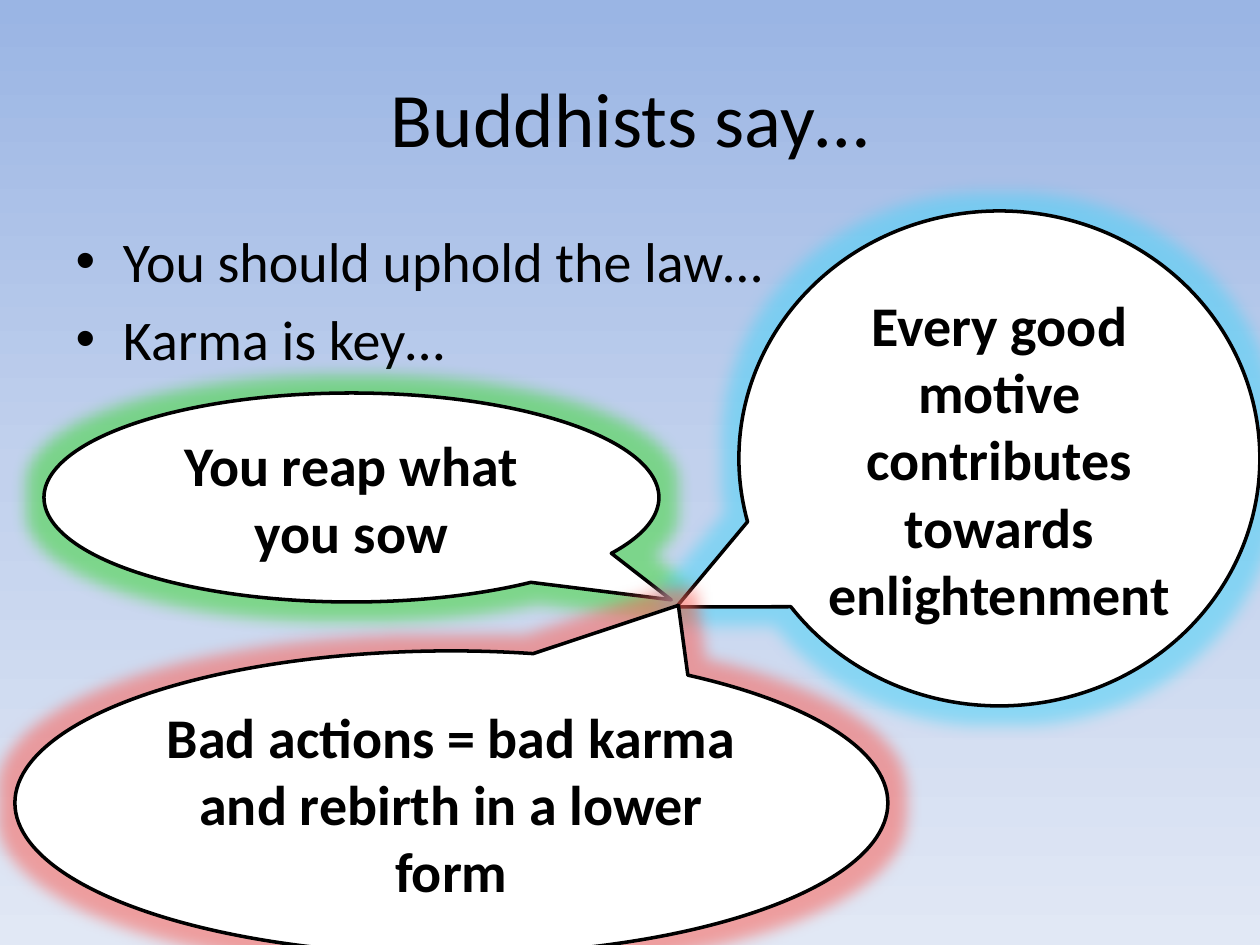
"""Build a slide on what Buddhists say, with three glowing speech bubbles."""
from lxml.etree import SubElement
from pptx import Presentation
from pptx.dml.color import RGBColor
from pptx.enum.shapes import MSO_SHAPE
from pptx.enum.text import MSO_ANCHOR, MSO_AUTO_SIZE, PP_ALIGN
from pptx.oxml.ns import qn
from pptx.util import Pt

PX = 914400 // 126
FONT = "Calibri"
COLORS = {
    "text": "000000", "bubble": "FFFFFF",
    "green": "40D63A", "blue": "4ED2F7", "red": "F96259",
}
BACKGROUND = [(0, "9AB5E4"), (50, "C2D1ED"), (100, "E1E8F5")]
TITLE = ("Buddhists say…", (63, 38, 1134, 157))
BODY = (["You should uphold the law…", "Karma is key…"], (63, 220, 1134, 624))
BUBBLES = [
    ("You reap what you sow", (44, 393, 615, 209), (0.52, 0.49), "green"),
    ("Every good motive contributes towards enlightenment",
     (739, 211, 521, 495), (-0.62, 0.3), "blue"),
    ("Bad actions = bad karma and rebirth in a lower form",
     (15, 651, 873, 304), (0.26, -0.65), "red"),
]


def rgb(name):
    return RGBColor.from_string(COLORS[name])


def emu(box):
    return [v * PX for v in box]


def place(s, box):
    s.left, s.top, s.width, s.height = emu(box)


def style(tf, size, bold=False, align=None):
    for p in tf.paragraphs:
        p.alignment = align
        for r in p.runs:
            r.font.name = FONT
            r.font.size = Pt(size)
            r.font.bold = bold
            r.font.color.rgb = rgb("text")


def add_color(parent, value):
    return SubElement(parent, qn("a:srgbClr"), val=value)


def paint_background(slide):
    fill = slide.background.fill
    fill.gradient()
    fill.gradient_angle = 270
    stops = slide.background._cSld.find(".//" + qn("a:gsLst"))
    stops.clear()
    for pos, color in BACKGROUND:
        add_color(SubElement(stops, qn("a:gs"), pos=str(pos * 1000)), color)


def add_bubble(slide, text, box, tail, glow):
    s = slide.shapes.add_shape(MSO_SHAPE.OVAL_CALLOUT, *emu(box))
    s.adjustments[0], s.adjustments[1] = tail
    s.fill.solid()
    s.fill.fore_color.rgb = rgb("bubble")
    s.line.color.rgb = rgb("text")
    s.line.width = Pt(2)
    s.shadow.inherit = False
    effects = s._element.spPr.find(qn("a:effectLst"))
    halo = SubElement(effects, qn("a:glow"), rad="228600")
    SubElement(add_color(halo, COLORS[glow]), qn("a:alpha"), val="55000")
    tf = s.text_frame
    tf.text = text
    tf.word_wrap = True
    tf.auto_size = MSO_AUTO_SIZE.SHAPE_TO_FIT_TEXT
    tf.vertical_anchor = MSO_ANCHOR.MIDDLE
    style(tf, 32, True, PP_ALIGN.CENTER)


def main():
    prs = Presentation()
    prs.slide_width, prs.slide_height = emu((1260, 945))
    slide = prs.slides.add_slide(prs.slide_layouts[1])
    paint_background(slide)

    title, body = slide.placeholders
    title.text_frame.text = TITLE[0]
    place(title, TITLE[1])
    style(title.text_frame, 44, align=PP_ALIGN.CENTER)
    body.text_frame.text = "\n".join(BODY[0])
    place(body, BODY[1])
    style(body.text_frame, 32)

    for bubble in BUBBLES:
        add_bubble(slide, *bubble)
    prs.save("out.pptx")


if __name__ == "__main__":
    main()
